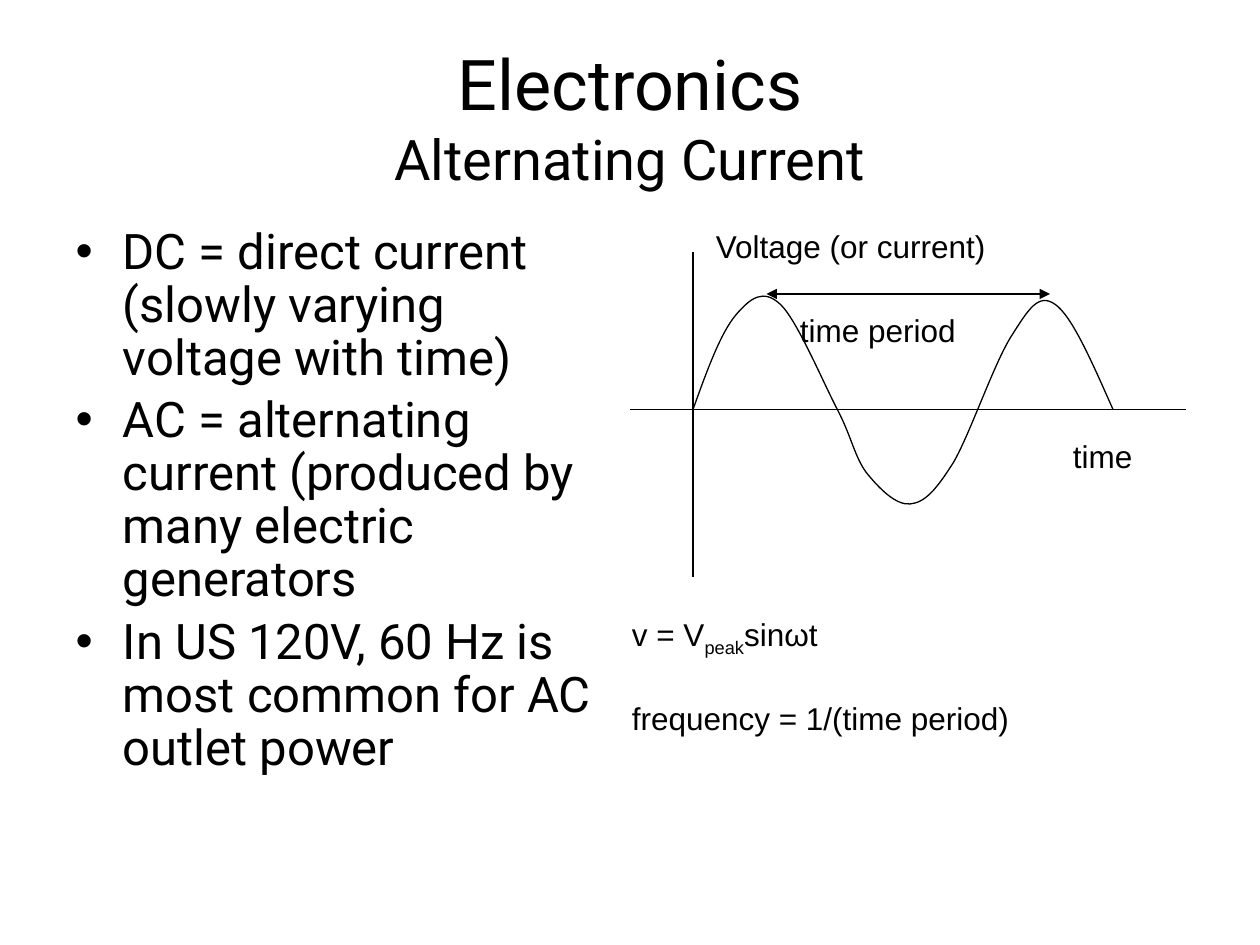
from dataclasses import dataclass

from lxml.etree import SubElement
from pptx import Presentation
from pptx.dml.color import RGBColor
from pptx.enum.shapes import MSO_CONNECTOR
from pptx.enum.text import MSO_ANCHOR, MSO_AUTO_SIZE, PP_ALIGN
from pptx.oxml.ns import qn
from pptx.slide import Slide
from pptx.util import Pt

BLACK = RGBColor(0x00, 0x00, 0x00)
WHITE = RGBColor(0xFF, 0xFF, 0xFF)

BULLETS = [
    "DC = direct current (slowly varying voltage with time)",
    "AC = alternating current (produced by many electric generators",
    "In US 120V, 60 Hz is most common for AC outlet power",
]

# Left, top, width, then text runs with their baseline shift
LABELS = [
    (402, 126, 180, [("Voltage (or current)", 0)]),
    (606, 246, 102, [("time", 0)]),
    (354, 348, 192, [("v = V", 0), ("peak", -25000), ("sinωt", 0)]),
    (450, 174, 120, [("time period", 0)]),
    (354, 396, 276, [("frequency = 1/(time period)", 0)]),
]

WAVE_START = (396, 234)
# Each curve piece: two control points and an end point
WAVE_PIECES = [
    ((404, 211.7), (411.9, 190.1), (420.5, 180)),
    ((429.1, 169.9), (436.3, 164.9), (446, 174)),
    ((455.5, 183), (470.2, 218.2), (478.5, 234)),
    ((486.7, 249.8), (488.2, 260.6), (495, 270)),
    ((502.6, 279.4), (511.9, 288.7), (520, 288)),
    ((528.5, 287.3), (535, 279.9), (545, 264)),
    ((554.4, 247.7), (568.1, 207.4), (578, 192)),
    ((587.5, 177.1), (593.3, 167), (603, 174)),
    ((612.7, 180.7), (624.2, 207.4), (636, 234)),
]


@dataclass
class Painter:
    page: Slide
    heading_font: str = "Roboto"
    label_font: str = "Arial"
    label_size: float = 18
    line_width: float = 0.75
    colour: RGBColor = BLACK

    def place(self, box, left, top, width, height):
        box.left, box.top = Pt(left), Pt(top)
        box.width, box.height = Pt(width), Pt(height)

    def span(self, para, text, font, size):
        span = para.add_run()
        span.text = text
        span.font.name = font
        span.font.size = Pt(size)
        span.font.color.rgb = self.colour
        return span

    def title(self, heading, subheading):
        box = self.page.shapes.title
        self.place(box, 36, 21.6, 648, 90)
        box.text_frame.auto_size = MSO_AUTO_SIZE.NONE
        box.text_frame.vertical_anchor = MSO_ANCHOR.MIDDLE
        para = box.text_frame.paragraphs[0]
        para.alignment = PP_ALIGN.CENTER
        self.span(para, heading, self.heading_font, 40)
        para.add_line_break()
        self.span(para, subheading, self.heading_font, 32)

    def bullets(self, items):
        box = self.page.placeholders[1]
        self.place(box, 36, 126, 318, 356.4)
        frame = box.text_frame
        frame.auto_size = MSO_AUTO_SIZE.NONE
        for index, item in enumerate(items):
            para = frame.add_paragraph() if index else frame.paragraphs[0]
            para.line_spacing = 0.9
            self.span(para, item, self.heading_font, 28)

    def label(self, left, top, width, runs):
        box = self.page.shapes.add_textbox(Pt(left), Pt(top), Pt(width), Pt(28.8))
        box.text_frame.word_wrap = True
        box.text_frame.auto_size = MSO_AUTO_SIZE.SHAPE_TO_FIT_TEXT
        para = box.text_frame.paragraphs[0]
        for text, baseline in runs:
            span = self.span(para, text, self.label_font, self.label_size)
            if baseline:
                span.font._element.set("baseline", str(baseline))

    def outline(self, shape):
        shape.line.color.rgb = self.colour
        shape.line.width = Pt(self.line_width)

    def line(self, x1, y1, x2, y2, arrows=False):
        line = self.page.shapes.add_connector(
            MSO_CONNECTOR.STRAIGHT, Pt(x1), Pt(y1), Pt(x2), Pt(y2)
        )
        self.outline(line)
        if arrows:
            for end in ("a:headEnd", "a:tailEnd"):
                SubElement(line.line._get_or_add_ln(), qn(end), type="triangle")
        SubElement(line._element.spPr, qn("a:effectLst"))

    def curve(self, start, pieces):
        """Outline the control points, then turn each three lines into a Bézier."""
        grid = 10  # outline units per point
        builder = self.page.shapes.build_freeform(
            start[0] * grid, start[1] * grid, scale=Pt(1) / grid
        )
        corners = [(x * grid, y * grid) for piece in pieces for x, y in piece]
        builder.add_line_segments(corners, close=False)
        curve = builder.convert_to_shape()
        outline = next(curve._element.iter(qn("a:path")))
        segments = outline.findall(qn("a:lnTo"))
        for first in range(0, len(segments), 3):
            bezier = SubElement(outline, qn("a:cubicBezTo"))
            for segment in segments[first:first + 3]:
                bezier.append(segment[0])
                outline.remove(segment)
        curve.fill.background()
        curve.shadow.inherit = False
        self.outline(curve)


def main():
    deck = Presentation()
    deck.slide_width, deck.slide_height = Pt(720), Pt(540)
    page = deck.slides.add_slide(deck.slide_layouts[1])
    page.background.fill.solid()
    page.background.fill.fore_color.rgb = WHITE

    painter = Painter(page)
    painter.title("Electronics", "Alternating Current")
    painter.bullets(BULLETS)
    painter.line(396, 144, 396, 330)
    painter.line(360, 234, 678, 234)
    for label in LABELS[:2]:
        painter.label(*label)
    painter.curve(WAVE_START, WAVE_PIECES)
    painter.label(*LABELS[2])
    painter.line(438, 168, 600, 168, arrows=True)
    for label in LABELS[3:]:
        painter.label(*label)
    deck.save("out.pptx")


if __name__ == "__main__":
    main()
